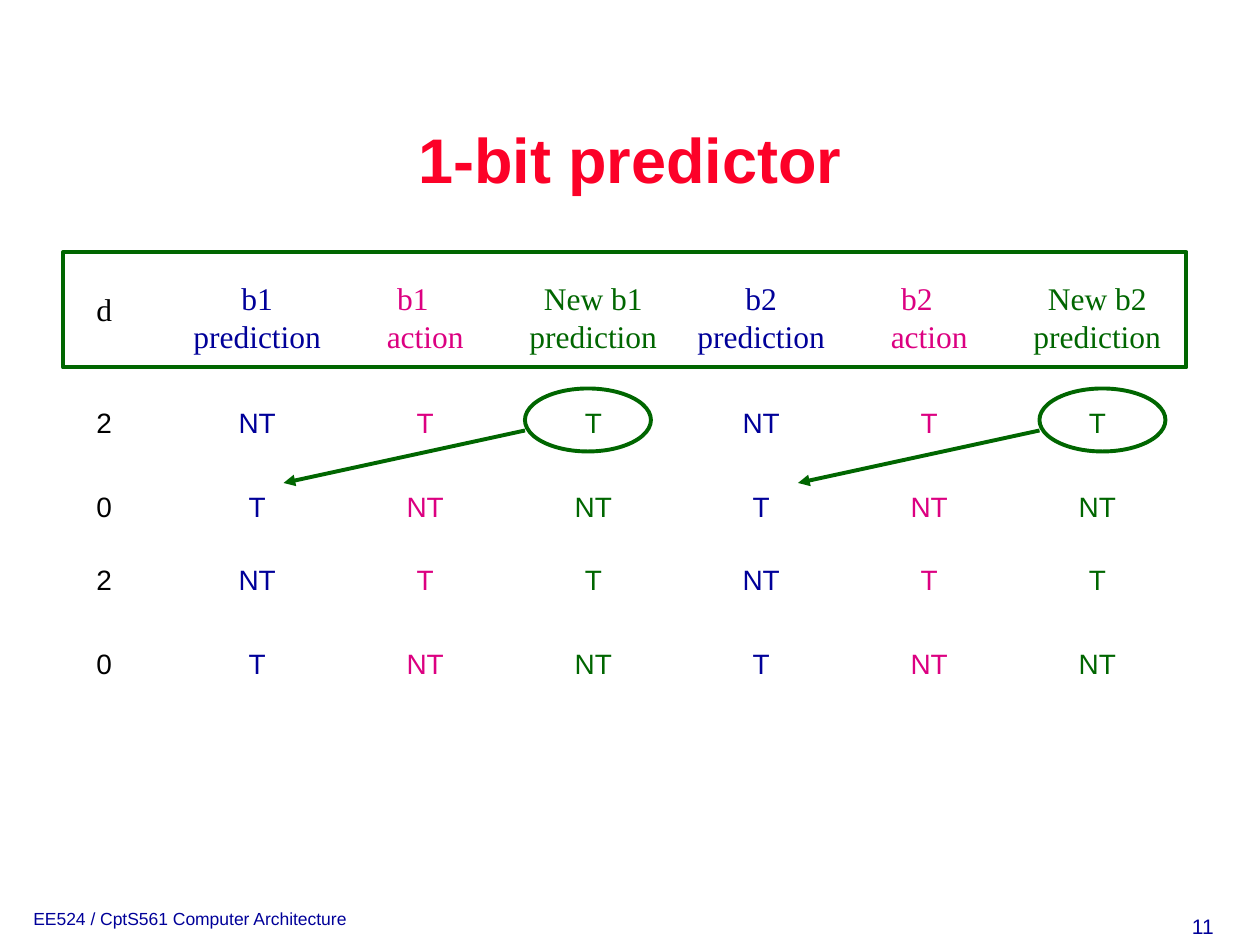
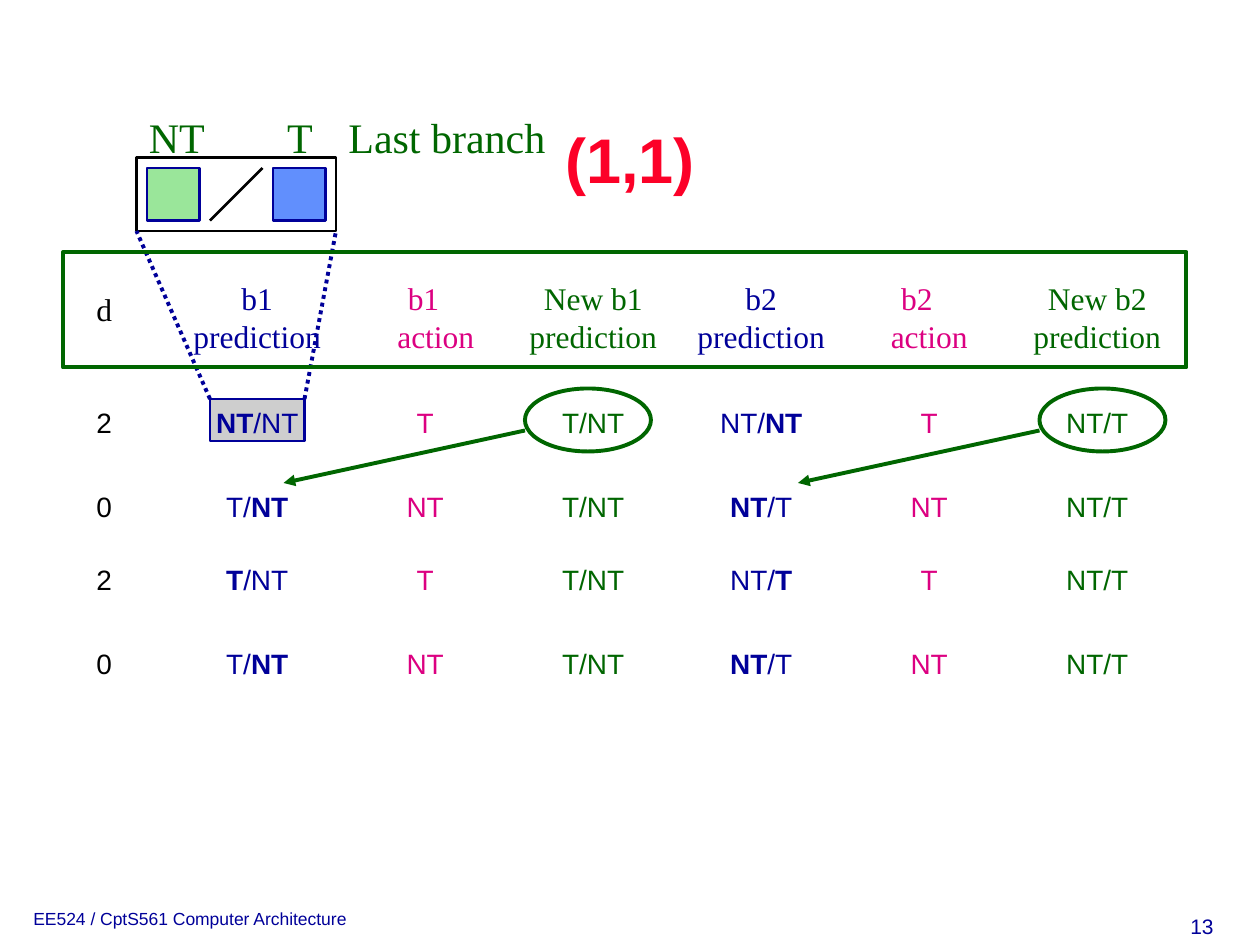
from lxml import etree
from pptx import Presentation
from pptx.dml.color import RGBColor
from pptx.enum.dml import MSO_LINE
from pptx.enum.shapes import MSO_CONNECTOR, MSO_SHAPE
from pptx.enum.text import MSO_ANCHOR, PP_ALIGN
from pptx.oxml.ns import qn
from pptx.util import Pt

RECT, OVAL = MSO_SHAPE.RECTANGLE, MSO_SHAPE.OVAL
STRAIGHT = MSO_CONNECTOR.STRAIGHT
DOTTED = MSO_LINE.ROUND_DOT
LEFT, CENTER, RIGHT = PP_ALIGN.LEFT, PP_ALIGN.CENTER, PP_ALIGN.RIGHT
MIDDLE = MSO_ANCHOR.MIDDLE

SANS, SERIF = "Arial", "Times New Roman"
RED, BLACK, WHITE, GREY = "FC0128", "000000", "FFFFFF", "CECECE"
NAVY, PINK, GREEN = "000099", "DC0081", "006600"
LIGHT_GREEN, LIGHT_BLUE = "9AE69A", "618FFD"

# Table grid, in points
D_LEFT, D_WIDTH = 48, 36
COL_LEFT, COL_PITCH, COL_WIDTH = 102, 96, 90
COL_COLORS = [NAVY, PINK, GREEN] * 2
ROW_TOPS = [228, 276, 318, 366]
ROW_HEIGHT = 26.64
D_VALUES = ["2", "0", "2", "0"]
HEADERS = ["b1 prediction", "b1\vaction", "New b1 prediction",
           "b2 prediction", "b2\vaction", "New b2 prediction"]
ACTION_INDENT = 14

# Asterisks enclose bold text
ONE_BIT_ROWS = [["NT", "T", "T"] * 2, ["T", "NT", "NT"] * 2] * 2
CORRELATED_ROWS = [
    ["*NT*/NT", "T", "T/NT", "NT/*NT*", "T", "NT/T"],
    ["T/*NT*", "NT", "T/NT", "*NT*/T", "NT", "NT/T"],
    ["*T*/NT", "T", "T/NT", "NT/*T*", "T", "NT/T"],
    ["T/*NT*", "NT", "T/NT", "*NT*/T", "NT", "NT/T"],
]


def rgb(value):
    return RGBColor.from_string(value)


class Deck:
    """Holds the shared style and the current slide."""

    def __init__(self):
        self.prs = Presentation()
        self.prs.slide_width, self.prs.slide_height = Pt(720), Pt(540)
        self.s = None

    def new_slide(self, title, number):
        self.s = self.prs.slides.add_slide(self.prs.slide_layouts[5])
        sp = self.s.shapes.title
        sp.left, sp.top, sp.width, sp.height = Pt(78), Pt(48), Pt(564), Pt(90)
        tf = sp.text_frame
        tf.text = title
        tf.vertical_anchor = MIDDLE
        p = tf.paragraphs[0]
        p.line_spacing = 0.9
        self.style(p, 36, RED, SANS, CENTER)
        p.font.bold = True
        self.text("EE524 / CptS561 Computer Architecture", 12, 515.5, 330, 19.5, 10, NAVY)
        self.text(str(number), 672, 518.5, 28.6, 21.5, 12, NAVY, align=RIGHT)

    def style(self, p, size, color, font, align):
        p.alignment = align
        p.font.size, p.font.name = Pt(size), font
        p.font.color.rgb = rgb(color)

    def text(self, text, x, y, w, h, size, color, font=SANS, align=LEFT):
        sp = self.s.shapes.add_textbox(Pt(x), Pt(y), Pt(w), Pt(h))
        tf = sp.text_frame
        tf.word_wrap = True
        p = tf.paragraphs[0]
        if "*" in text:
            for i, part in enumerate(text.split("*")):
                if part:
                    r = p.add_run()
                    r.text = part
                    r.font.bold = i % 2 == 1
        else:
            p.text = text
        self.style(p, size, color, font, align)
        return sp

    def shape(self, kind, x, y, w, h, line, weight, fill=None):
        sp = self.s.shapes.add_shape(kind, Pt(x), Pt(y), Pt(w), Pt(h))
        sp.shadow.inherit = False
        if fill:
            sp.fill.solid()
            sp.fill.fore_color.rgb = rgb(fill)
        else:
            sp.fill.background()
        sp.line.color.rgb = rgb(line)
        sp.line.width = Pt(weight)

    def line(self, start, end, color, weight, dash=None, arrow=False):
        (x1, y1), (x2, y2) = start, end
        sp = self.s.shapes.add_connector(STRAIGHT, Pt(x1), Pt(y1), Pt(x2), Pt(y2))
        sp.line.color.rgb = rgb(color)
        sp.line.width = Pt(weight)
        if dash:
            sp.line.dash_style = dash
        props = sp.element.spPr
        if arrow:
            etree.SubElement(props.find(qn("a:ln")), qn("a:tailEnd"), type="triangle")
        etree.SubElement(props, qn("a:effectLst"))

    def header(self, b1_action_shift):
        self.text("d", D_LEFT, 162, D_WIDTH, 28.8, 18, BLACK, SERIF)
        for col, (label, color) in enumerate(zip(HEADERS, COL_COLORS)):
            x = COL_LEFT + col * COL_PITCH + (b1_action_shift if col == 1 else 0)
            sp = self.text(label, x, 156, COL_WIDTH, 50.4, 18, color, SERIF, CENTER)
            if "\v" in label:
                # A hanging indent sets the first line left of the second
                tf = sp.text_frame
                tf.margin_left, tf.margin_right = 0, Pt(ACTION_INDENT)
                props = tf.paragraphs[0]._p.get_or_add_pPr()
                props.set("marL", str(Pt(ACTION_INDENT)))
                props.set("indent", str(-Pt(ACTION_INDENT)))
        self.shape(RECT, 36, 144, 642, 66, GREEN, 2.25)

    def prediction_table(self, rows, b1_action_shift=0):
        self.header(b1_action_shift)
        for y, d, values in zip(ROW_TOPS, D_VALUES, rows):
            self.text(d, D_LEFT, y, D_WIDTH, ROW_HEIGHT, 16, BLACK)
            for col, (value, color) in enumerate(zip(values, COL_COLORS)):
                self.text(value, COL_LEFT + col * COL_PITCH, y, COL_WIDTH,
                          ROW_HEIGHT, 16, color, align=CENTER)
        # New predictions carried to the next row
        for x in (300, 594):
            self.line((x, 246), (x - 138, 276), GREEN, 2.25, arrow=True)
            self.shape(OVAL, x, 222, 72, 36, GREEN, 2.25)

    def last_branch_callout(self):
        self.shape(RECT, 120, 228, 54, 24, NAVY, 1.5, GREY)
        self.shape(RECT, 78, 90, 114, 42, BLACK, 1.5, WHITE)
        self.line((150, 96), (120, 126), BLACK, 1.5)
        for x, fill in ((84, LIGHT_GREEN), (156, LIGHT_BLUE)):
            self.shape(RECT, x, 96, 30, 30, NAVY, 1.5, fill)
        sp = self.text("NT\tT", 78, 60, 114, 36, 24, GREEN, SERIF)
        props = sp.text_frame.paragraphs[0]._p.get_or_add_pPr()
        tabs = etree.Element(qn("a:tabLst"))
        etree.SubElement(tabs, qn("a:tab"), pos=str(Pt(79)), algn="l")
        props.insert_element_before(tabs, "a:defRPr", "a:extLst")
        self.text("Last branch", 192, 60, 156, 36, 24, GREEN, SERIF)
        for bottom, top in ((120, 78), (174, 192)):
            self.line((bottom, 228), (top, 132), NAVY, 2.25, dash=DOTTED)


def main():
    deck = Deck()

    # 1-bit predictor
    deck.new_slide("1-bit predictor", 11)
    deck.prediction_table(ONE_BIT_ROWS)

    # (1,1) predictor, with the callout behind the table text
    deck.new_slide("(1,1)", 13)
    deck.last_branch_callout()
    deck.prediction_table(CORRELATED_ROWS, b1_action_shift=6)

    deck.prs.save("out.pptx")


if __name__ == "__main__":
    main()
